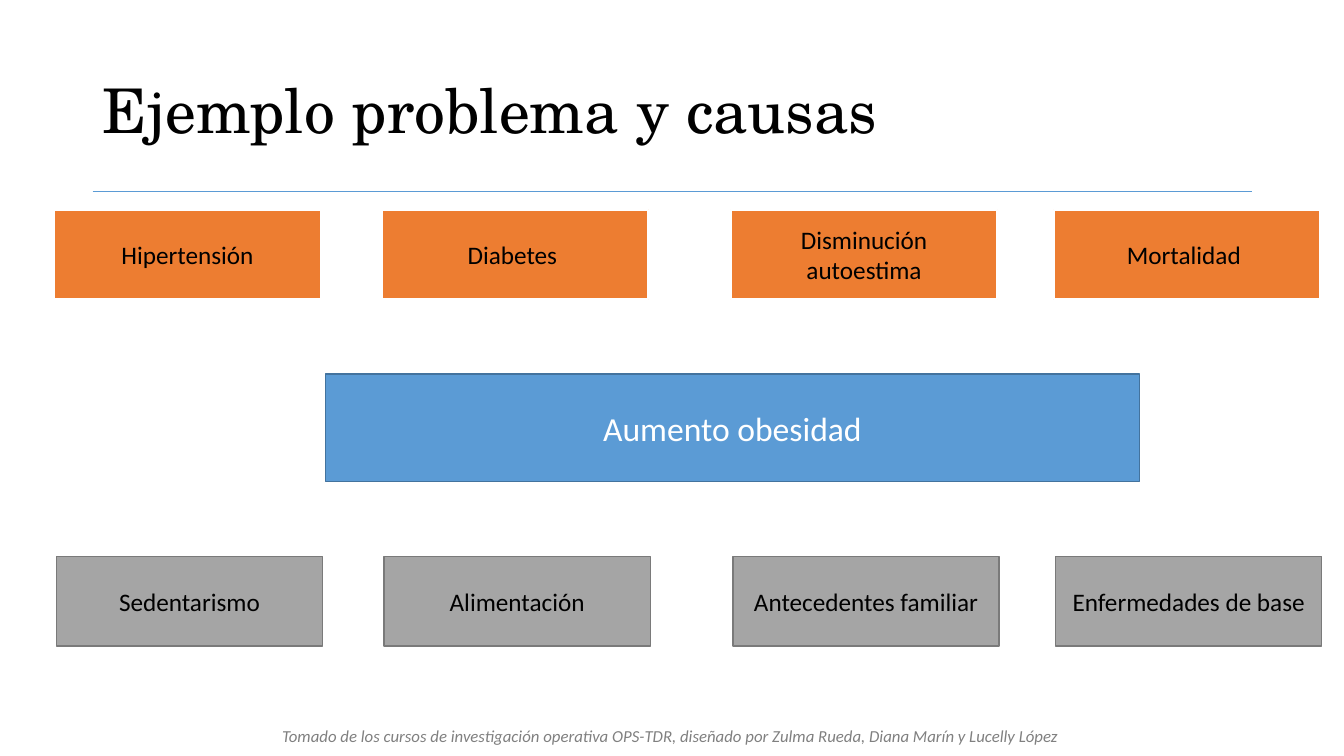
from dataclasses import dataclass
from lxml.etree import SubElement
from pptx import Presentation
from pptx.dml.color import RGBColor
from pptx.enum.shapes import MSO_CONNECTOR, MSO_SHAPE
from pptx.enum.text import MSO_ANCHOR, MSO_AUTO_SIZE, PP_ALIGN
from pptx.oxml.ns import qn
from pptx.util import Inches, Pt

TITLE = "Ejemplo problema y causas"
PROBLEM = "Aumento obesidad"
EFFECTS = ["Hipertensión", "Diabetes ", "Disminución autoestima", "Mortalidad "]
CAUSES = ["Sedentarismo", "Alimentación", "Antecedentes familiar", "Enfermedades de base"]
CREDIT = ("Tomado de los cursos de investigación operativa OPS-TDR, "
          "diseñado por Zulma Rueda, Diana Marín y Lucelly López")

COLUMNS = [0.54, 3.79, 7.25, 10.45]
BOX_W, BOX_H = 2.64, 0.89
EFFECTS_Y, CAUSES_Y = 2.08, 5.52
CAUSES_SHIFT = 0.02
MARGIN, CONTENT_W, RULE_Y = 0.92, 11.5, 1.9


@dataclass(frozen=True)
class Theme:
    title_font: str = "TeX Gyre Schola"
    body_font: str = "Calibri"
    title_size: int = 44
    problem_size: int = 24
    box_size: int = 18
    credit_size: int = 12
    black: str = "000000"
    white: str = "FFFFFF"
    blue: str = "5B9BD5"
    blue_edge: str = "43739E"
    gray: str = "A5A5A5"
    gray_edge: str = "7A7A7A"
    orange: str = "ED7D31"
    credit: str = "808080"


T = Theme()


def rgb(color):
    return RGBColor.from_string(color)


def add_run(p, text, size, color, font=T.body_font, italic=None):
    r = p.add_run()
    r.text = text
    r.font.name = font
    r.font.size = Pt(size)
    r.font.italic = italic
    r.font.color.rgb = rgb(color)


def add_box(s, text, at, fill, edge, edge_w, size, color):
    sp = s.shapes.add_shape(MSO_SHAPE.RECTANGLE, *map(Inches, at))
    sp.shadow.inherit = False
    sp.fill.solid()
    sp.fill.fore_color.rgb = rgb(fill)
    sp.line.color.rgb = rgb(edge)
    sp.line.width = Pt(edge_w)
    tf = sp.text_frame
    tf.word_wrap = True
    tf.vertical_anchor = MSO_ANCHOR.MIDDLE
    p = tf.paragraphs[0]
    p.alignment = PP_ALIGN.CENTER
    add_run(p, text, size, color)


def add_title(s):
    sp = s.shapes.title
    sp.left, sp.top, sp.width, sp.height = map(Inches, (MARGIN, 0.4, CONTENT_W, 1.45))
    tf = sp.text_frame
    tf.word_wrap = True
    tf.vertical_anchor = MSO_ANCHOR.MIDDLE
    p = tf.paragraphs[0]
    p.alignment = PP_ALIGN.LEFT
    p.line_spacing = 0.9
    add_run(p, TITLE, T.title_size, T.black, T.title_font)


def add_rule(s):
    ends = (MARGIN, RULE_Y, MARGIN + CONTENT_W, RULE_Y)
    line = s.shapes.add_connector(MSO_CONNECTOR.STRAIGHT, *map(Inches, ends))
    line.line.color.rgb = rgb(T.blue)
    line.line.width = Pt(0.5)
    SubElement(line._element.spPr, qn("a:effectLst"))


def add_credit(s):
    tf = s.shapes.add_textbox(*map(Inches, (2.7, 7.15, 7.94, 0.3))).text_frame
    tf.word_wrap = False
    tf.auto_size = MSO_AUTO_SIZE.SHAPE_TO_FIT_TEXT
    add_run(tf.paragraphs[0], CREDIT, T.credit_size, T.credit, italic=True)


def main():
    prs = Presentation()
    prs.slide_width, prs.slide_height = Inches(13.33), Inches(7.5)
    s = prs.slides.add_slide(prs.slide_layouts[5])
    add_credit(s)
    add_rule(s)
    add_title(s)
    add_box(s, PROBLEM, (3.23, 3.71, 8.07, 1.07), T.blue, T.blue_edge, 1,
            T.problem_size, T.white)
    for x, cause, effect in zip(COLUMNS, CAUSES, EFFECTS):
        add_box(s, cause, (x + CAUSES_SHIFT, CAUSES_Y, BOX_W, BOX_H),
                T.gray, T.gray_edge, 1, T.box_size, T.black)
        add_box(s, effect, (x, EFFECTS_Y, BOX_W, BOX_H),
                T.orange, T.white, 1.5, T.box_size, T.black)
    prs.save("out.pptx")


if __name__ == "__main__":
    main()
